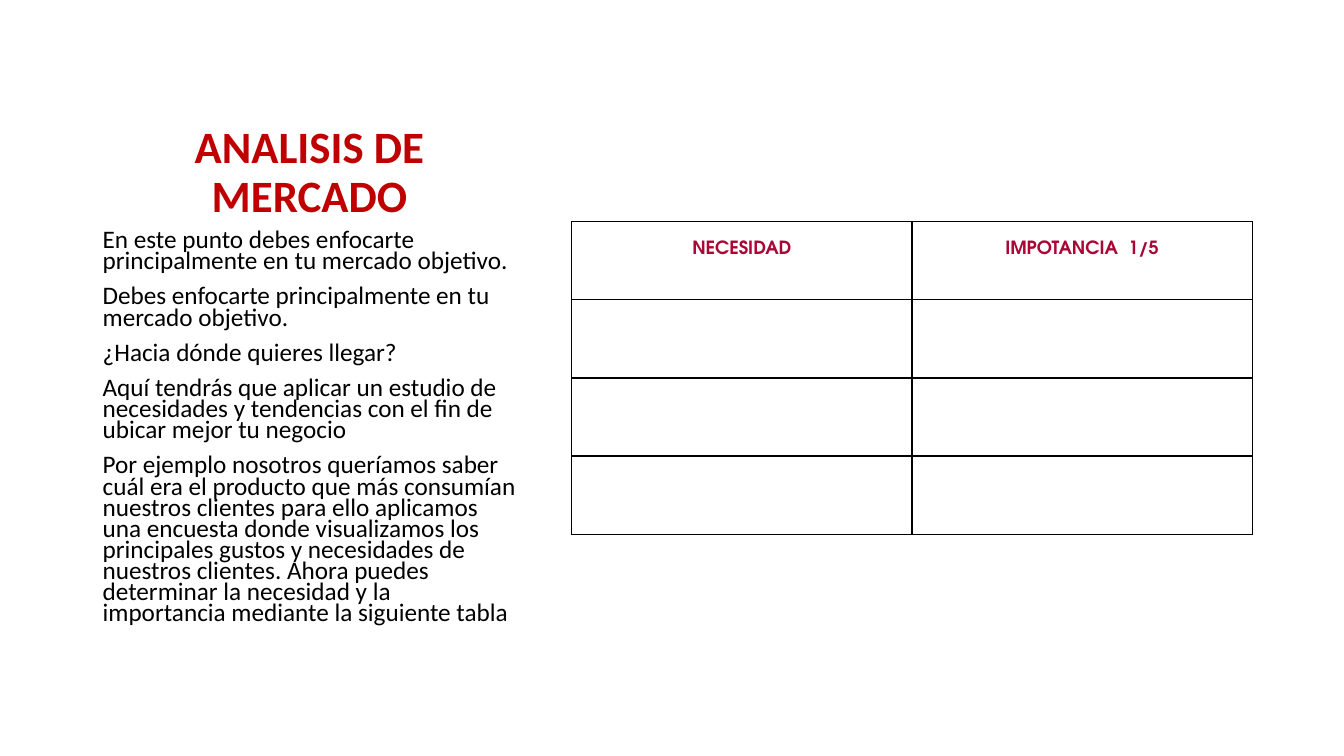
from dataclasses import dataclass

from lxml import etree
from pptx import Presentation
from pptx.dml.color import RGBColor
from pptx.enum import text
from pptx.oxml import ns
from pptx.util import Inches, Pt


@dataclass(frozen=True)
class Theme:
    body_font: str = "Calibri"
    table_font: str = "TeX Gyre Adventor"
    title_color: str = "C00000"
    body_color: str = "000000"
    header_color: str = "A90735"
    border_color: str = "000000"
    title_size: float = 32
    body_size: float = 18
    header_size: float = 13


THEME = Theme()
TITLE = "ANALISIS DE MERCADO"
GUIDANCE = [
    "En este punto debes enfocarte principalmente en tu mercado objetivo.",
    "Debes enfocarte principalmente en tu mercado objetivo.",
    "¿Hacia dónde quieres llegar?",
    "Aquí tendrás que aplicar un estudio de necesidades y tendencias con el fin de "
    "ubicar mejor tu negocio",
    "Por ejemplo nosotros queríamos saber cuál era el producto que más consumían "
    "nuestros clientes para ello aplicamos una encuesta donde visualizamos los "
    "principales gustos y necesidades de nuestros clientes. Ahora puedes determinar "
    "la necesidad y la importancia mediante la siguiente tabla",
]
HEADERS = ["NECESIDAD", "IMPOTANCIA  1/5"]
ROW_COUNT = 4


def style(para, font, size, color, bold=False):
    para.font.name = font
    para.font.size = Pt(size)
    para.font.bold = bold
    para.font.color.rgb = RGBColor.from_string(color)


def add_text(page, left, top, width, height, anchor):
    box = page.shapes.add_textbox(Inches(left), Inches(top), Inches(width), Inches(height))
    frame = box.text_frame
    frame.word_wrap = True
    frame.vertical_anchor = anchor
    return frame


def add_title(page):
    frame = add_text(page, 0.92, 0.5, 4.3, 1.75, text.MSO_ANCHOR.BOTTOM)
    para = frame.paragraphs[0]
    para.text = TITLE
    para.alignment = text.PP_ALIGN.CENTER
    para.line_spacing = 0.9
    style(para, THEME.body_font, THEME.title_size, THEME.title_color, True)


def add_guidance(page):
    frame = add_text(page, 0.92, 2.25, 4.3, 4.17, text.MSO_ANCHOR.TOP)
    frame.text = "\n".join(GUIDANCE)
    for para in frame.paragraphs:
        para.line_spacing = 0.7
        para.space_before = Pt(10)
        style(para, THEME.body_font, THEME.body_size, THEME.body_color)


def outline_cell(cell):
    properties = cell._tc.get_or_add_tcPr()
    for position, side in enumerate(("lnL", "lnR", "lnT", "lnB")):
        line = etree.Element(ns.qn(f"a:{side}"), w=str(Pt(1)))
        fill = etree.SubElement(line, ns.qn("a:solidFill"))
        etree.SubElement(fill, ns.qn("a:srgbClr"), val=THEME.border_color)
        properties.insert(position, line)


def add_needs_table(page):
    table = page.shapes.add_table(
        ROW_COUNT, len(HEADERS), Inches(5.67), Inches(2.2), Inches(6.75), Inches(3.1)
    ).table
    table.first_row = False
    table.horz_banding = False
    for cell in table.iter_cells():
        cell.fill.background()
        outline_cell(cell)
    for cell, label in zip(table.rows[0].cells, HEADERS):
        cell.margin_left = cell.margin_right = Inches(0.06)
        cell.margin_top = Inches(0.17)
        cell.margin_bottom = 0
        para = cell.text_frame.paragraphs[0]
        para.text = label
        para.alignment = text.PP_ALIGN.CENTER
        para.line_spacing = 1.15
        style(para, THEME.table_font, THEME.header_size, THEME.header_color, True)


def main():
    deck = Presentation()
    deck.slide_width = Inches(13.33)
    deck.slide_height = Inches(7.5)
    page = deck.slides.add_slide(deck.slide_layouts[6])
    add_title(page)
    add_needs_table(page)
    add_guidance(page)
    deck.save("out.pptx")


if __name__ == "__main__":
    main()
